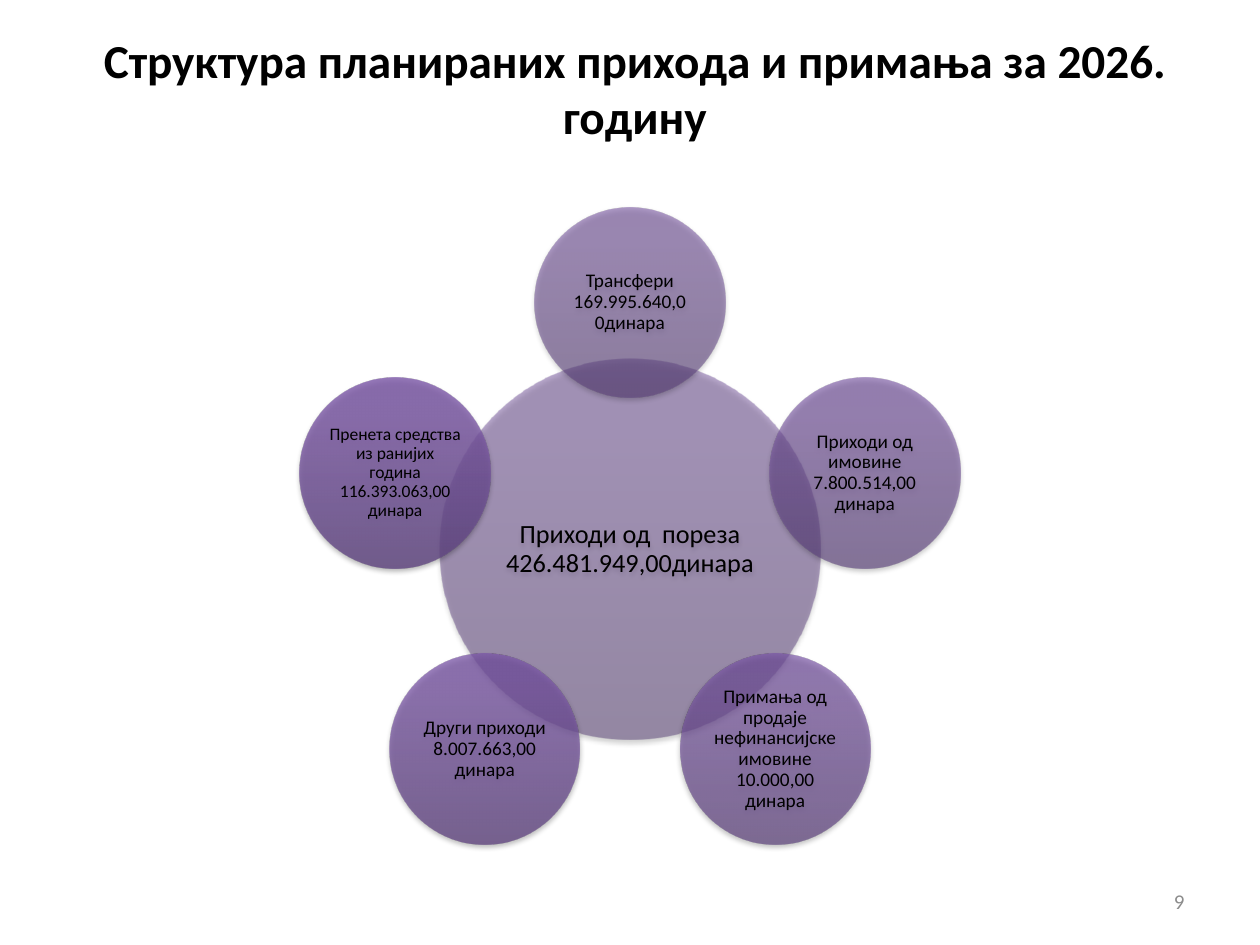
import math

from lxml import etree
from pptx import Presentation, util as u
from pptx.dml.color import RGBColor
from pptx.enum import shapes, text
from pptx.oxml import ns

COLORS = {"text": "000000", "number": "8C8C8C", "shadow": "000000"}
FONT = "Calibri"
WIDTH, HEIGHT = 10, 7.5
CENTER_X, CENTER_Y = WIDTH / 2, 4.36
HUB_SIZE, SATELLITE_SIZE, ORBIT = 3.02, 1.51, 1.96

HUB = ("Приходи од  пореза 426.481.949,00динара", 15, ("563D74", "705097", "704F99"), 50)
SATELLITES = [
    ("Трансфери 169.995.640,0 0динара", 11, ("583E77", "72519A", "73509C"), 56),
    ("Приходи од имовине 7.800.514,00 динара", 11, ("5A407A", "75539E", "7551A0"), 62),
    ("Примања од продаје нефинансијске имовине 10.000,00 динара", 11,
     ("5C417C", "7754A1", "7753A4"), 68),
    ("Други приходи 8.007.663,00 динара", 11, ("5E427E", "7956A4", "7A55A6"), 74),
    ("Пренета средства из ранијих година 116.393.063,00 динара", 10,
     ("5F4580", "7C59A6", "7C58A8"), 80),
]


def add_child(parent, tag, **attributes):
    values = {name: str(value) for name, value in attributes.items()}
    return etree.SubElement(parent, ns.qn(tag), values)


def add_color(parent, color, opacity):
    element = add_child(parent, "a:srgbClr", val=color)
    add_child(element, "a:alpha", val=opacity * 1000)


def write_text(shape, content, size, color, align, inset=None, bold=False, spacing=None):
    frame = shape.text_frame
    frame.text = content
    frame.word_wrap = True
    frame.vertical_anchor = text.MSO_ANCHOR.MIDDLE
    if inset is not None:
        frame.margin_left = frame.margin_right = u.Inches(inset)
        frame.margin_top = frame.margin_bottom = u.Inches(inset)
    paragraph = frame.paragraphs[0]
    paragraph.alignment = align
    if spacing:
        paragraph.line_spacing = spacing
    font = paragraph.runs[0].font
    font.name, font.size, font.bold = FONT, u.Pt(size), bold
    font.color.rgb = RGBColor.from_string(COLORS[color])


def add_label(slide, box, content, size, color, align, bold=False):
    label = slide.shapes.add_textbox(*(u.Inches(length) for length in box))
    write_text(label, content, size, color, align, bold=bold)


def shade_circle(circle, colors, opacity):
    circle.fill.gradient()
    circle.fill.gradient_angle = 90
    stops = circle._element.spPr.find(ns.qn("a:gradFill")).find(ns.qn("a:gsLst"))
    for stop in list(stops):
        stops.remove(stop)
    for position, color in zip((0, 80, 100), colors):
        add_color(add_child(stops, "a:gs", pos=position * 1000), color, opacity)
    circle.line.fill.background()
    circle.shadow.inherit = False
    effects = circle._element.spPr.find(ns.qn("a:effectLst"))
    shadow = add_child(effects, "a:outerShdw", blurRad=u.Pt(3.1), dist=u.Pt(1.8),
                       dir=90 * 60000, rotWithShape=0)
    add_color(shadow, COLORS["shadow"], 35)


def add_circle(slide, x, y, diameter, content, size, colors, opacity):
    circle = slide.shapes.add_shape(
        shapes.MSO_SHAPE.OVAL, u.Inches(x - diameter / 2), u.Inches(y - diameter / 2),
        u.Inches(diameter), u.Inches(diameter))
    shade_circle(circle, colors, opacity)
    write_text(circle, content, size, "text", text.PP_ALIGN.CENTER,
               inset=0.01 if size == 10 else 0.02, spacing=0.9)


def add_satellites(slide):
    for index, satellite in enumerate(SATELLITES):
        angle = math.tau * index / len(SATELLITES)
        add_circle(slide, CENTER_X + ORBIT * math.sin(angle),
                   CENTER_Y - ORBIT * math.cos(angle), SATELLITE_SIZE, *satellite)


def main():
    presentation = Presentation()
    presentation.slide_width = u.Inches(WIDTH)
    presentation.slide_height = u.Inches(HEIGHT)
    slide = presentation.slides.add_slide(presentation.slide_layouts[6])
    add_label(slide, (0.54, 0.27, 9, 0.85),
              "Структура планираних прихода и примања за 2026. годину",
              27, "text", text.PP_ALIGN.CENTER, bold=True)
    add_label(slide, (7.17, 6.95, 2.33, 0.4), "9", 12, "number", text.PP_ALIGN.RIGHT)
    add_circle(slide, CENTER_X, CENTER_Y, HUB_SIZE, *HUB)
    add_satellites(slide)
    presentation.save("out.pptx")


if __name__ == "__main__":
    main()
